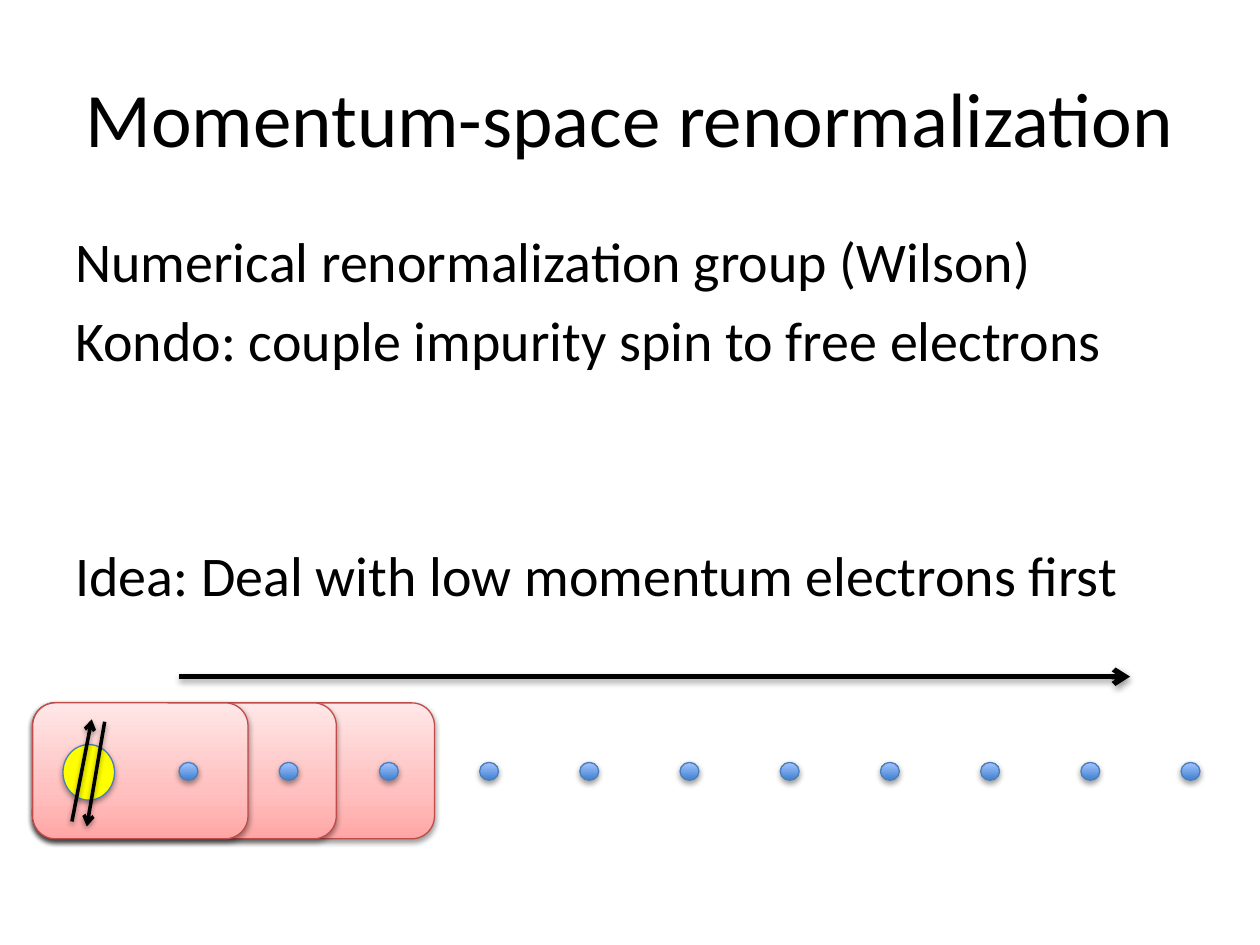
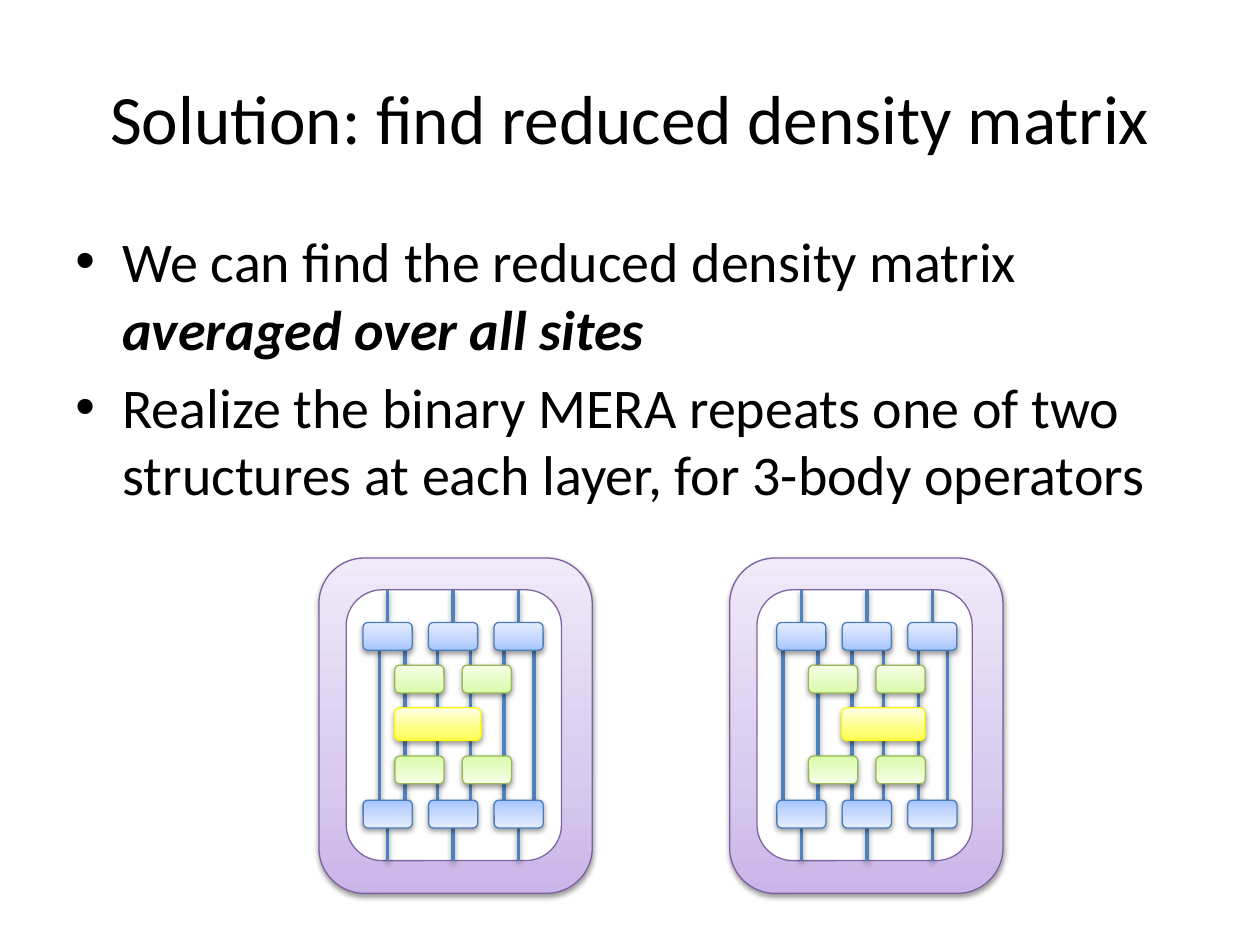
import pptx
import pptx.util
import pptx.dml.color
import pptx.enum.shapes
import pptx.enum.text
import pptx.oxml.ns
from lxml import etree

Cm = pptx.util.Cm
Pt = pptx.util.Pt
qn = pptx.oxml.ns.qn
SHAPE = pptx.enum.shapes.MSO_SHAPE
ALIGN = pptx.enum.text.PP_ALIGN
ANCHOR = pptx.enum.text.MSO_ANCHOR

FONT = "Calibri"
BLACK = "000000"
WIRE = "4F81BD"
BLUE_EDGE = "4B7EBC"
PINK = ([(0, "FFA6A5"), (35, "FFC0BF"), (100, "FFE7E7")], "BF4C48")
PURPLE = ([(0, "C9B5E8"), (35, "D8CBEE"), (100, "F0EAF9")], "7D60A0")
BLUE = ([(0, "A4C4FF"), (35, "BFD4FF"), (100, "E6EEFF")], BLUE_EDGE)
GREEN = ([(0, "DAFDA7"), (35, "E4FCC2"), (100, "F5FFE7")], "98B955")
YELLOW = ([(0, "FFFF52"), (35, "FFFF81"), (100, "FFFFE8")], "FFFF00")
DOT = ([(0, "3F80CE"), (100, "A4C4FF")], BLUE_EDGE)
IMPURITY = ("FFFF00", BLUE_EDGE)
WINDOW = ("FFFFFF", "8064A2")


def rgb(hex_color):
    return pptx.dml.color.RGBColor.from_string(hex_color)


def child(parent, tag, **attrs):
    return etree.SubElement(parent, qn(tag), attrs)


def add_shadow(effects):
    shadow = child(effects, "a:outerShdw", blurRad="40000", dist="20000",
                   dir="5400000", rotWithShape="0")
    color = child(shadow, "a:srgbClr", val=BLACK)
    child(color, "a:alpha", val="38000")


def fill_gradient(sp, stops):
    sp.fill.gradient()
    sp.fill.gradient_angle = 90
    stop_list = sp._element.spPr.find(qn("a:gradFill")).find(qn("a:gsLst"))
    for stop in list(stop_list):
        stop_list.remove(stop)
    for percent, color in stops:
        stop = child(stop_list, "a:gs", pos=str(percent * 1000))
        child(stop, "a:srgbClr", val=color)


def add_block(s, kind, left, top, width, height, style, shadow=True, rotation=0):
    fill, edge = style
    sp = s.shapes.add_shape(kind, Cm(left), Cm(top), Cm(width), Cm(height))
    sp.rotation = rotation
    sp.shadow.inherit = False
    if isinstance(fill, str):
        sp.fill.solid()
        sp.fill.fore_color.rgb = rgb(fill)
    else:
        fill_gradient(sp, fill)
    sp.line.color.rgb = rgb(edge)
    sp.line.width = Pt(0.75)
    if shadow:
        add_shadow(sp._element.spPr.find(qn("a:effectLst")))


def add_line(s, x1, y1, x2, y2, color=WIRE, width=2, arrow=False):
    line = s.shapes.add_connector(pptx.enum.shapes.MSO_CONNECTOR.STRAIGHT,
                                  Cm(x1), Cm(y1), Cm(x2), Cm(y2))
    line.line.color.rgb = rgb(color)
    line.line.width = Pt(width)
    if arrow:
        child(line.line._get_or_add_ln(), "a:tailEnd", type="arrow")
    add_shadow(child(line._element.spPr, "a:effectLst"))


def add_text_box(s, left, top, width, height):
    tf = s.shapes.add_textbox(Cm(left), Cm(top), Cm(width), Cm(height)).text_frame
    tf.word_wrap = True
    return tf


def add_run(p, text, size, emphasis=False):
    r = p.add_run()
    r.text = text
    r.font.name = FONT
    r.font.size = Pt(size)
    r.font.color.rgb = rgb(BLACK)
    if emphasis:
        r.font.bold = True
        r.font.italic = True


def add_title(s, text, size):
    tf = add_text_box(s, 1.27, 0.76, 22.86, 3.18)
    tf.vertical_anchor = ANCHOR.MIDDLE
    p = tf.paragraphs[0]
    p.alignment = ALIGN.CENTER
    add_run(p, text, size)


def add_body(s, items, bullets=False):
    tf = add_text_box(s, 1.27, 4.45, 22.86, 12.57)
    for i, (space, runs) in enumerate(items):
        p = tf.add_paragraph() if i else tf.paragraphs[0]
        p.space_before = Pt(space)
        if bullets:
            pPr = p._p.get_or_add_pPr()
            pPr.set("marL", str(Cm(0.95)))
            pPr.set("indent", str(-Cm(0.95)))
            child(pPr, "a:buFont", typeface="Arial")
            child(pPr, "a:buChar", char="•")
        for text, emphasis in runs:
            add_run(p, text, 32, emphasis)


def add_wilson_chain(s, left, top):
    for width in (8.1, 6.12, 4.34):
        add_block(s, SHAPE.ROUNDED_RECTANGLE, left, top, width, 2.74, PINK)
    add_block(s, SHAPE.OVAL, left + 0.61, top + 0.84, 1.04, 1.12, IMPURITY)
    for site in range(11):
        add_block(s, SHAPE.OVAL, left + 2.95 + 2.02 * site, top + 1.2, 0.38, 0.36, DOT)
    for x1, y1, x2, y2, width in ((1.45, 0.38, 1.09, 2.49, 2),
                                  (0.79, 2.39, 1.19, 0.33, 2),
                                  (2.95, -0.53, 22.12, -0.53, 3)):
        add_line(s, left + x1, top + y1, left + x2, top + y2, BLACK, width, True)


def add_mera_layer(s, left, top, inset, wires, operator_left, operator_width):
    box_width, box_height, pitch = 0.99, 0.56, 1.32
    add_block(s, SHAPE.ROUNDED_RECTANGLE, left, top, 5.51, 6.76, PURPLE)
    add_block(s, SHAPE.ROUNDED_RECTANGLE, left + 0.55, top + 0.64, 4.34, 5.46,
              WINDOW, shadow=False)
    isometries = [left + inset + pitch * i for i in range(3)]
    disentanglers = [left + inset + 0.64 + 1.36 * i for i in range(2)]
    for x in isometries:
        center = x + box_width / 2
        add_line(s, center, top + 0.64, center, top + 1.3)
        add_line(s, center, top + 6.1, center, top + 5.44)
    for wire in wires:
        for end in (1.85, 4.88):
            add_line(s, left + wire, top + end, left + wire, top + 3.02)
    for columns, upper, lower, style in ((isometries, 1.3, 4.88, BLUE),
                                         (disentanglers, 2.16, 3.99, GREEN)):
        for x in columns:
            for y, rotation in ((upper, 0), (lower, 180)):
                add_block(s, SHAPE.ROUNDED_RECTANGLE, x, top + y, box_width,
                          box_height, style, rotation=rotation)
    add_block(s, SHAPE.ROUNDED_RECTANGLE, left + operator_left, top + 3.02,
              operator_width, 0.66, YELLOW)


def build_momentum_slide(s):
    add_title(s, "Momentum-space renormalization", 44)
    add_body(s, [
        (6.4, [("Numerical renormalization group (Wilson)", False)]),
        (6.4, [("Kondo: couple impurity spin to free electrons", False)]),
        (96, [("Idea: Deal with low momentum electrons first", False)]),
    ])
    add_wilson_chain(s, 0.66, 14.17)


def build_density_slide(s):
    add_title(s, "Solution: find reduced density matrix", 39.6)
    add_body(s, [
        (6.4, [("We can find the reduced density matrix ", False),
               ("averaged over all sites", True)]),
        (6.4, [("Realize the binary MERA repeats one of two structures "
                "at each layer, for 3-body operators", False)]),
    ], bullets=True)
    add_mera_layer(s, 6.43, 11.25, 0.89, (1.22, 1.73, 2.39, 3.05, 3.73, 4.34), 1.52, 1.75)
    add_mera_layer(s, 14.71, 11.25, 0.95, (1.07, 1.78, 2.46, 3.1, 3.81, 4.39), 2.26, 1.68)


def main():
    prs = pptx.Presentation()
    prs.slide_width = Cm(25.4)
    prs.slide_height = Cm(19.05)
    for build in (build_momentum_slide, build_density_slide):
        build(prs.slides.add_slide(prs.slide_layouts[6]))
    prs.save("out.pptx")


if __name__ == "__main__":
    main()
